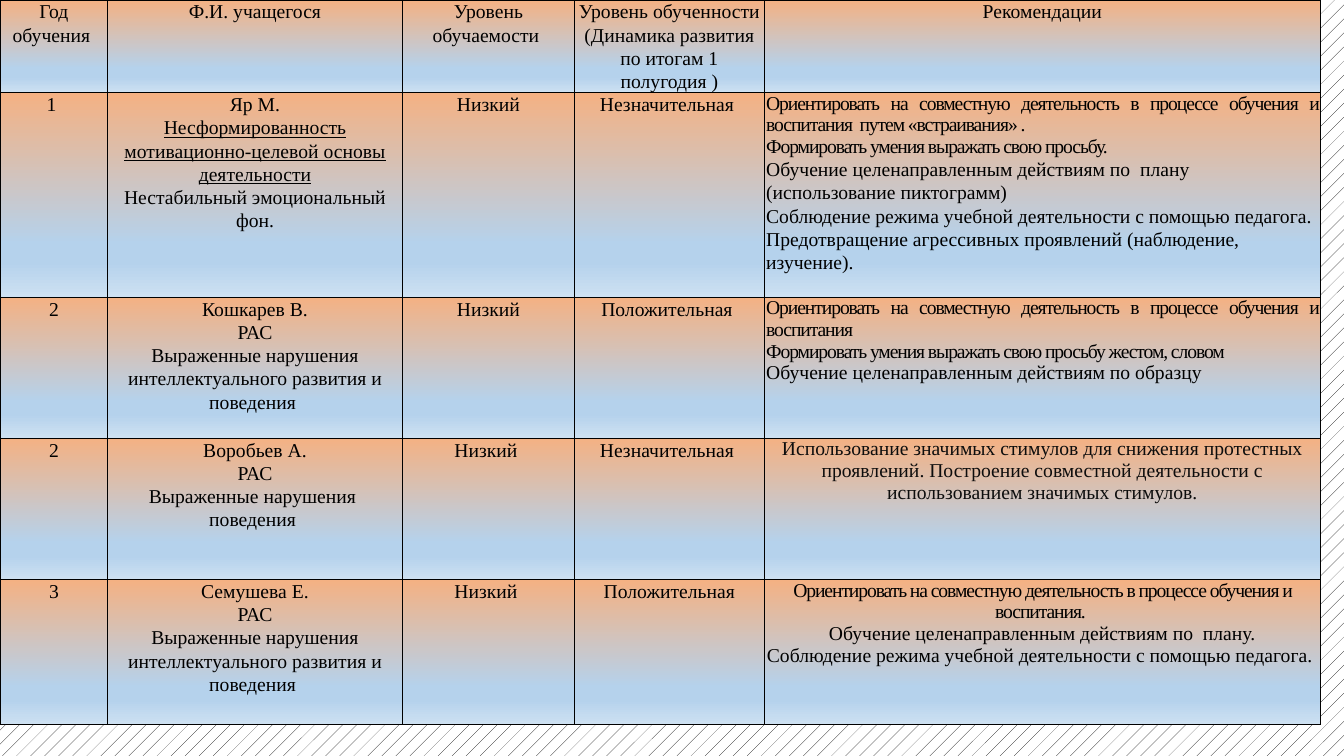
from lxml import etree
from pptx import Presentation
from pptx.dml.color import RGBColor
from pptx.enum.dml import MSO_PATTERN
from pptx.enum.text import PP_ALIGN
from pptx.oxml import parse_xml
from pptx.oxml.ns import nsdecls
from pptx.util import Inches, Pt

LEFT, CENTER, JUSTIFY = PP_ALIGN.LEFT, PP_ALIGN.CENTER, PP_ALIGN.JUSTIFY
DOTTED = MSO_PATTERN.PERCENT_5
BLACK = RGBColor(0x00, 0x00, 0x00)
NEAR_BLACK = RGBColor(0x0D, 0x0D, 0x0D)
WHITE = RGBColor(0xFF, 0xFF, 0xFF)
PEACH = RGBColor(0xF4, 0xB1, 0x83)
SKY = RGBColor(0xB5, 0xD2, 0xEC)
PALE_SKY = RGBColor(0xCE, 0xE1, 0xF2)
GRADIENT = [(0, PEACH), (74, SKY), (83, SKY), (100, PALE_SKY)]

FONT = {"name": "Times New Roman", "size": Pt(14), "underline": None}
TIGHT_SPACING = "-80"

# Paragraph styles: alignment, line spacing, tight letters, font changes
BODY = (CENTER, 1.07, False, {})
UNDERLINED = (CENTER, 1.07, False, {"underline": True})
ADVICE = (LEFT, 1.07, False, {})
ADVICE_SINGLE = (LEFT, 1.0, False, {})
ADVICE_CENTER = (CENTER, 1.0, False, {})
TIGHT = (JUSTIFY, 1.0, True, {})
TIGHT_CENTER = (CENTER, 1.0, True, {})

COLUMN_WIDTHS = [1.07, 2.92, 1.71, 1.88, 5.52]
ROW_HEIGHTS = [0.7, 2.03, 1.4, 1.4, 1.44]
TABLE_HEIGHT = 7.42

AUTISM = "РАС"
DISORDERS = "Выраженные нарушения интеллектуального развития и поведения "
GUIDE = "Ориентировать на совместную деятельность в процессе обучения и воспитания"
REGIME = "Соблюдение режима учебной деятельности с помощью педагога."

# A cell is a list of paragraphs; a plain string is in the BODY style
ROWS = [
    [
        ["Год обучения "],
        ["Ф.И. учащегося"],
        ["Уровень обучаемости "],
        ["Уровень обученности", "(Динамика развития по итогам 1 полугодия )"],
        ["Рекомендации"],
    ],
    [
        ["1 "],
        [
            "Яр М.",
            ("Несформированность мотивационно-целевой основы деятельности", UNDERLINED),
            "Нестабильный эмоциональный фон.",
        ],
        ["Низкий"],
        ["Незначительная "],
        [
            (GUIDE + "  путем «встраивания» . ", TIGHT),
            ("Формировать умения выражать свою просьбу.", TIGHT),
            ("Обучение целенаправленным действиям по  плану  (использование пиктограмм)", ADVICE),
            (REGIME, ADVICE),
            ("Предотвращение агрессивных проявлений (наблюдение, изучение).", ADVICE),
        ],
    ],
    [
        ["2"],
        ["Кошкарев В.", AUTISM, DISORDERS],
        ["Низкий"],
        ["Положительная "],
        [
            (GUIDE, TIGHT),
            ("Формировать умения выражать свою просьбу жестом, словом", TIGHT),
            ("Обучение целенаправленным действиям по образцу", ADVICE_SINGLE),
        ],
    ],
    [
        ["2"],
        ["Воробьев А.", AUTISM, "Выраженные нарушения  поведения "],
        ["Низкий "],
        ["Незначительная "],
        [
            (
                "Использование значимых стимулов для снижения протестных проявлений. "
                "Построение совместной деятельности с использованием значимых стимулов.",
                (CENTER, 1.0, False, {"color": NEAR_BLACK}),
            ),
        ],
    ],
    [
        ["3"],
        ["Семушева Е.", AUTISM, DISORDERS],
        ["Низкий "],
        ["Положительная"],
        [
            (GUIDE + ". ", TIGHT_CENTER),
            ("Обучение целенаправленным действиям по  плану.", ADVICE_CENTER),
            (REGIME + " ", ADVICE_CENTER),
        ],
    ],
]


def paint_cell(cell):
    """Give the cell its margins, black borders and vertical gradient."""
    cell.margin_left = cell.margin_right = Inches(0.02)
    cell.margin_top = cell.margin_bottom = 0
    properties = cell._tc.get_or_add_tcPr()
    for side in ("lnL", "lnR", "lnT", "lnB"):
        properties.append(parse_xml(
            f'<a:{side} {nsdecls("a")} w="{Pt(1)}"><a:solidFill>'
            f'<a:srgbClr val="{BLACK}"/></a:solidFill></a:{side}>'))
    gradient = parse_xml(
        f'<a:gradFill {nsdecls("a")} rotWithShape="1"><a:gsLst/>'
        '<a:lin ang="5400000" scaled="0"/></a:gradFill>')
    namespace = "{" + gradient.nsmap["a"] + "}"
    for position, color in GRADIENT:
        stop = etree.SubElement(gradient[0], namespace + "gs", pos=str(position * 1000))
        etree.SubElement(stop, namespace + "srgbClr", val=str(color))
    properties.append(gradient)


def write_paragraph(paragraph, text, style):
    alignment, line_spacing, tight, changes = style
    paragraph.alignment = alignment
    paragraph.line_spacing = line_spacing
    run = paragraph.add_run()
    run.text = text
    values = {**FONT, "color": BLACK, **changes}
    run.font.color.rgb = values.pop("color")
    for attribute, value in values.items():
        setattr(run.font, attribute, value)
    if tight:
        run._r.get_or_add_rPr().set("spc", TIGHT_SPACING)


presentation = Presentation()
presentation.slide_width = Inches(13.33)
presentation.slide_height = Inches(7.5)
slide = presentation.slides.add_slide(presentation.slide_layouts[6])

background = slide.background.fill
background.patterned()
background.pattern = DOTTED
background.fore_color.rgb = BLACK
background.back_color.rgb = WHITE

table_frame = slide.shapes.add_table(
    len(ROW_HEIGHTS), len(COLUMN_WIDTHS), 0, 0,
    Inches(sum(COLUMN_WIDTHS)), Inches(TABLE_HEIGHT))
table = table_frame.table
table.first_row = table.horz_banding = False
for column, width in zip(table.columns, COLUMN_WIDTHS):
    column.width = Inches(width)
for row, height in zip(table.rows, ROW_HEIGHTS):
    row.height = Inches(height)
table_frame.height = Inches(TABLE_HEIGHT)

for row, row_texts in zip(table.rows, ROWS):
    for cell, entries in zip(row.cells, row_texts):
        paint_cell(cell)
        frame = cell.text_frame
        for index, entry in enumerate(entries):
            text, style = (entry, BODY) if isinstance(entry, str) else entry
            paragraph = frame.add_paragraph() if index else frame.paragraphs[0]
            write_paragraph(paragraph, text, style)

presentation.save("out.pptx")
